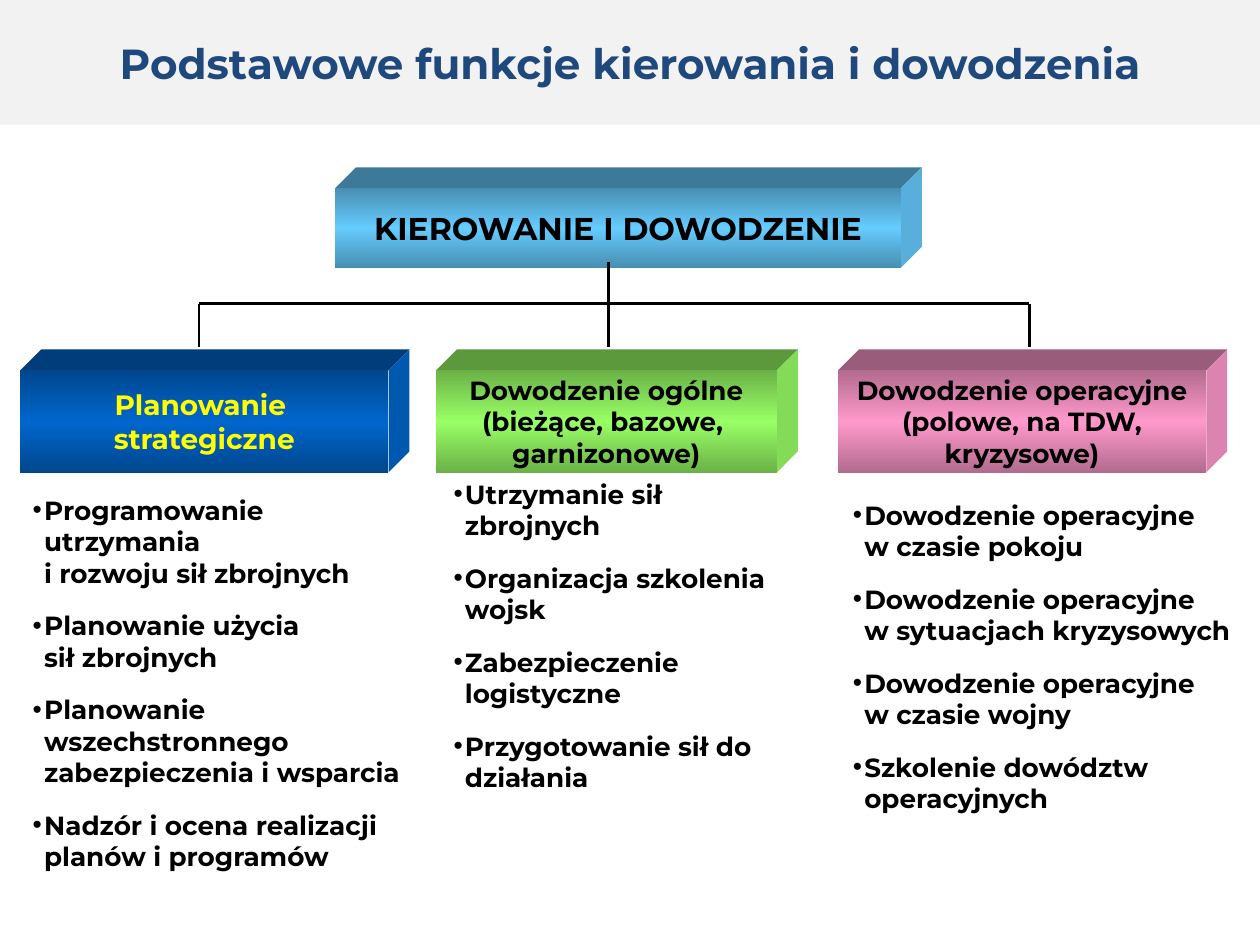
import copy
from dataclasses import dataclass

from lxml import etree
from pptx import Presentation
from pptx import util as u
from pptx.dml import color
from pptx.enum import shapes, text
from pptx.oxml import ns


@dataclass(frozen=True)
class Theme:
    font: str = "Montserrat"
    title_size: float = 24
    root_size: float = 18
    lead_size: float = 16
    body_size: float = 15
    ink: str = "000000"
    paper: str = "FFFFFF"
    title_ink: str = "1F497D"
    title_fill: str = "F2F2F2"
    lead_ink: str = "FFFF00"
    sky: tuple = ("478EB2", "66CCFF")
    navy: tuple = ("00478E", "0066CC")
    green: tuple = ("6BB247", "99FF66")
    pink: tuple = ("B26B8E", "FF99CC")


def rgb(value):
    return color.RGBColor.from_string(value)


def shade(value, factor=0.86):
    return "".join(f"{round(part * factor):02X}" for part in rgb(value))


def apply_format(target, values):
    for name, value in values.items():
        setattr(target, name, value)


class ChartSlide:
    depth = 12

    def __init__(self, slide, theme):
        self.slide = slide
        self.theme = theme

    def place(self, shape, box):
        names = ("left", "top", "width", "height")
        apply_format(shape, {name: u.Pt(value) for name, value in zip(names, box)})

    def fill(self, shape, value):
        shape.fill.solid()
        shape.fill.fore_color.rgb = rgb(value)

    def set_text(self, shape, lines, size, ink, frame_format, paragraph_format):
        """Set one paragraph per line; a newline inside a line is a soft break."""
        frame = shape.text_frame
        apply_format(frame, {"auto_size": text.MSO_AUTO_SIZE.NONE,
                             "vertical_anchor": text.MSO_ANCHOR.MIDDLE,
                             **frame_format})
        for index, line in enumerate(lines):
            paragraph = frame.add_paragraph() if index else frame.paragraphs[0]
            paragraph.text = line
            apply_format(paragraph, {"line_spacing": 1.0, "space_before": u.Pt(0),
                                     **paragraph_format})
            for run in paragraph.runs:
                apply_format(run.font, {"name": self.theme.font, "size": u.Pt(size),
                                        "bold": True})
                run.font.color.rgb = rgb(ink)
            run_style = paragraph.runs[0]._r.find(ns.qn("a:rPr"))
            for line_break in paragraph._p.findall(ns.qn("a:br")):
                line_break.append(copy.deepcopy(run_style))

    def title(self, wording, box):
        shape = self.slide.shapes.title
        self.place(shape, box)
        self.fill(shape, self.theme.title_fill)
        self.set_text(shape, [wording], self.theme.title_size, self.theme.title_ink,
                      {"word_wrap": True}, {"alignment": text.PP_ALIGN.CENTER})

    def bullet_list(self, placeholder, lines, box):
        self.place(placeholder, box)
        self.fill(placeholder, self.theme.paper)
        self.set_text(placeholder, lines, self.theme.body_size, self.theme.ink,
                      {"word_wrap": True},
                      {"alignment": text.PP_ALIGN.LEFT, "space_after": u.Pt(12)})
        indent = u.Pt(6.5)
        for paragraph in placeholder.text_frame.paragraphs:
            properties = paragraph._p.get_or_add_pPr()
            properties.set("marL", str(indent))
            properties.set("indent", str(-indent))
            etree.SubElement(properties, ns.qn("a:buFont"), typeface="Arial")
            etree.SubElement(properties, ns.qn("a:buChar"), char="•")

    def face(self, points, value):
        (x, y), *rest = [(u.Pt(x), u.Pt(y)) for x, y in points]
        builder = self.slide.shapes.build_freeform(x, y)
        builder.add_line_segments(rest, close=True)
        shape = builder.convert_to_shape()
        shape.shadow.inherit = False
        self.fill(shape, value)
        shape.line.fill.background()

    def block(self, lines, box, colours, size, ink):
        """Draw a gradient box with a raised top and right side."""
        edge, middle = colours
        left, top, width, height = box
        right, bottom, depth = left + width, top + height, self.depth
        corner = (right + depth, top - depth)
        self.face([(left, top), (left + depth, top - depth), corner, (right, top)],
                  shade(edge))
        self.face([(right, top), corner, (right + depth, bottom - depth),
                   (right, bottom)], shade(middle))
        shape = self.slide.shapes.add_shape(
            shapes.MSO_SHAPE.FLOWCHART_PROCESS, *map(u.Pt, box))
        shape.shadow.inherit = False
        shape.line.fill.background()
        shape.fill.gradient()
        shape.fill.gradient_angle = 90
        for stop, value, position in zip(shape.fill.gradient_stops, colours, (0, 0.5)):
            stop.color.rgb = rgb(value)
            stop.position = position
        stops = shape._element.spPr.find(".//" + ns.qn("a:gsLst"))
        last = copy.deepcopy(stops[0])
        last.set("pos", "100000")
        stops.append(last)
        self.set_text(shape, lines, size, ink, {"word_wrap": False},
                      {"alignment": text.PP_ALIGN.CENTER})

    def line(self, *ends):
        connector = self.slide.shapes.add_connector(
            shapes.MSO_CONNECTOR.STRAIGHT, *map(u.Pt, ends))
        connector.line.width = u.Pt(1.5)
        connector.line.color.rgb = rgb(self.theme.ink)
        etree.SubElement(connector._element.spPr, ns.qn("a:effectLst"))


def main():
    theme = Theme()
    presentation = Presentation()
    presentation.slide_width, presentation.slide_height = u.Pt(720), u.Pt(540)
    slide = presentation.slides.add_slide(
        presentation.slide_layouts.get_by_name("Comparison"))
    chart = ChartSlide(slide, theme)
    chart.title("Podstawowe funkcje kierowania i dowodzenia", (0, 0, 720, 71.3))

    columns = [
        (["Planowanie \nstrategiczne"], 11.5, 210.5, theme.navy, theme.lead_size,
         theme.lead_ink, (11.5, 264.2, 234.7, 252),
         ["Programowanie utrzymania   \ni rozwoju sił zbrojnych",
          "Planowanie użycia \nsił zbrojnych",
          "Planowanie wszechstronnego zabezpieczenia i wsparcia",
          "Nadzór i ocena realizacji planów i programów"]),
        (["Dowodzenie ogólne", "(bieżące, bazowe, ", "garnizonowe)"],
         249.1, 194.8, theme.green, theme.body_size, theme.ink,
         (252, 252, 204.5, 222.5),
         ["Utrzymanie sił zbrojnych", "Organizacja szkolenia wojsk",
          "Zabezpieczenie logistyczne", "Przygotowanie sił do działania"]),
        (["Dowodzenie operacyjne", "(polowe, na TDW,", "kryzysowe)"],
         478.8, 210.5, theme.pink, theme.body_size, theme.ink,
         (480.2, 252, 239.8, 246.2),
         ["Dowodzenie operacyjne \nw czasie pokoju",
          "Dowodzenie operacyjne \nw sytuacjach kryzysowych",
          "Dowodzenie operacyjne \nw czasie wojny",
          "Szkolenie dowództw operacyjnych"]),
    ]
    _, *bodies, spare = slide.placeholders
    spare._element.getparent().remove(spare._element)
    for body, (heading, left, width, colours, size, ink, box, lines) in zip(bodies, columns):
        chart.bullet_list(body, lines, box)
        chart.block(heading, (left, 211.7, width, 58.3), colours, size, ink)
    chart.block(["KIEROWANIE I DOWODZENIE"], (191.5, 107.6, 323.3, 45.4),
                theme.sky, theme.root_size, theme.ink)

    branches = (113.8, 347.8, 588.2)
    trunk_top, rail, branch_end = 149.8, 173.5, 198
    chart.line(branches[0], rail, branches[-1], rail)
    for x in branches:
        chart.line(x, rail, x, branch_end)
    chart.line(branches[1], trunk_top, branches[1], rail)
    presentation.save("out.pptx")


if __name__ == "__main__":
    main()
